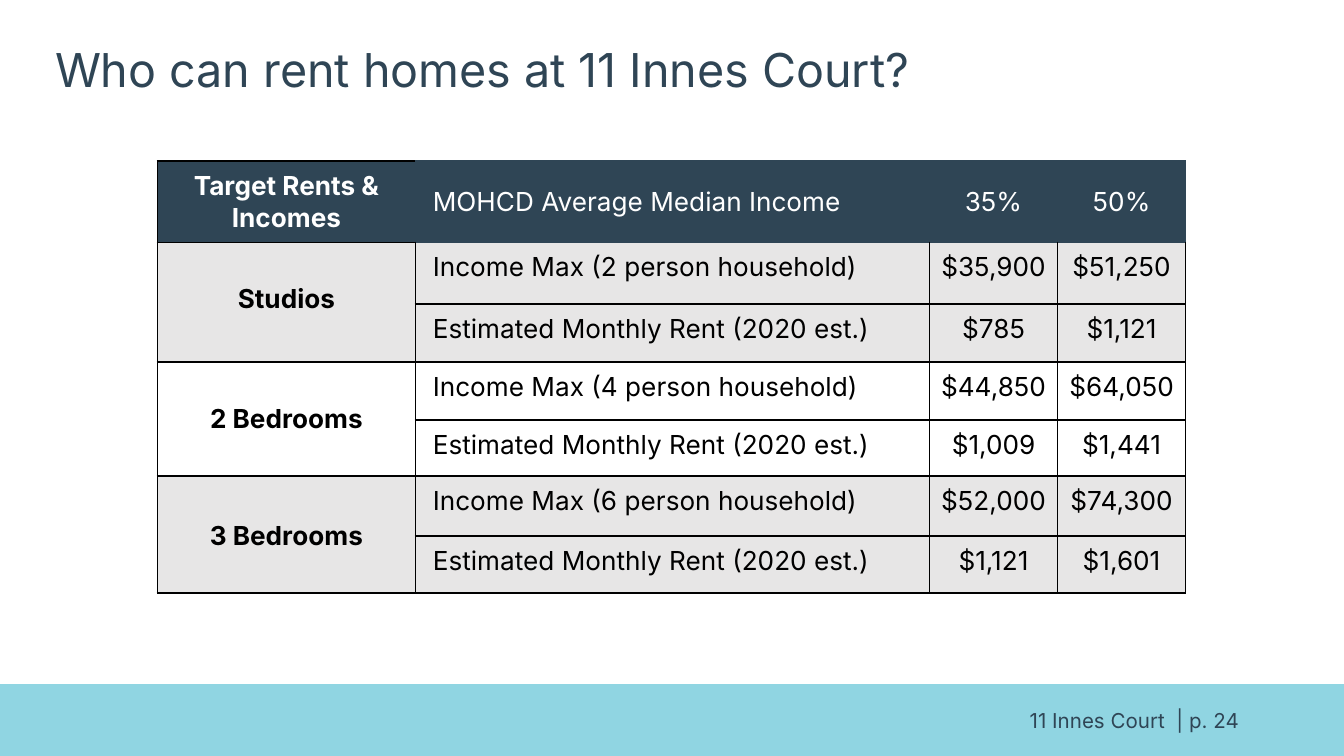
from dataclasses import dataclass
from typing import Any, NamedTuple

from lxml import etree
from pptx import Presentation
from pptx.dml.color import RGBColor
from pptx.enum.shapes import MSO_SHAPE
from pptx.enum.text import MSO_ANCHOR, PP_ALIGN
from pptx.oxml.ns import qn
from pptx.util import Pt

RECTANGLE = MSO_SHAPE.RECTANGLE
TOP, MIDDLE = MSO_ANCHOR.TOP, MSO_ANCHOR.MIDDLE
LEFT, CENTER, RIGHT = PP_ALIGN.LEFT, PP_ALIGN.CENTER, PP_ALIGN.RIGHT

COLORS = {
    "navy": "2F4555",
    "aqua": "90D5E2",
    "gray": "E7E6E6",
    "white": "FFFFFF",
    "black": "000000",
}
FONT = "Inter"
SLIDE_WIDTH, SLIDE_HEIGHT = 720, 405
TABLE_LEFT, TABLE_TOP = 84.4, 86.2
COLUMN_WIDTHS = (138.2, 275.4, 68.6, 68.6)
ROW_HEIGHTS = (43.4, 33.1, 31, 31, 30.2, 32.2, 30.5)
CELL_INSET = 5
LABEL_INDENT = 4.3
EDGES = ("lnL", "lnR", "lnT", "lnB")
HEADINGS = ("MOHCD Average Median Income", "35%", "50%")


class Box(NamedTuple):
    left: float
    top: float
    width: float
    height: float


@dataclass(frozen=True)
class TextStyle:
    size: float
    color: str
    bold: bool = False
    align: PP_ALIGN = LEFT
    line_spacing: float = 1.0


@dataclass(frozen=True)
class HomeType:
    name: str
    household: int
    incomes: tuple[str, str]
    rents: tuple[str, str]
    fill: str
    name_inset: float


@dataclass(frozen=True)
class CellFormat:
    style: TextStyle
    fill: str
    borders: tuple[str, str, str, str]
    anchor: MSO_ANCHOR = TOP
    top_inset: float = CELL_INSET
    indent: float = 0


HOME_TYPES = (
    HomeType("Studios", 2, ("$35,900", "$51,250"), ("$785", "$1,121"), "gray", 22),
    HomeType("2 Bedrooms", 4, ("$44,850", "$64,050"), ("$1,009", "$1,441"), "white", 22),
    HomeType("3 Bedrooms", 6, ("$52,000", "$74,300"), ("$1,121", "$1,601"), "gray", 23.5),
)


def rgb(name: str) -> RGBColor:
    """Return the named colour."""
    return RGBColor.from_string(COLORS[name])


def set_attributes(target: Any, values: dict[str, Any]) -> None:
    """Set every format value on the target."""
    for name, value in values.items():
        setattr(target, name, value)


def write_text(text_frame: Any, text: str, style: TextStyle, indent: float = 0) -> None:
    """Fill a text frame with one styled paragraph per line."""
    for index, line in enumerate(text.split("\n")):
        paragraph = text_frame.add_paragraph() if index else text_frame.paragraphs[0]
        if indent:
            paragraph._p.get_or_add_pPr().set("marL", str(Pt(indent)))
        set_attributes(paragraph, {"alignment": style.align, "line_spacing": style.line_spacing})
        run = paragraph.add_run()
        run.text = line
        set_attributes(run.font, {"name": FONT, "size": Pt(style.size), "bold": style.bold})
        run.font.color.rgb = rgb(style.color)


def add_text(slide: Any, box: Box, text: str, style: TextStyle, inset: tuple[float, float]) -> None:
    """Add a wrapped, vertically centred text box."""
    text_frame = slide.shapes.add_textbox(*map(Pt, box)).text_frame
    horizontal, vertical = map(Pt, inset)
    set_attributes(text_frame, {
        "word_wrap": True,
        "vertical_anchor": MIDDLE,
        "margin_left": horizontal,
        "margin_right": horizontal,
        "margin_top": vertical,
        "margin_bottom": vertical,
    })
    write_text(text_frame, text, style)


def add_band(slide: Any, box: Box, color: str) -> None:
    """Add a plain filled rectangle."""
    shape = slide.shapes.add_shape(RECTANGLE, *map(Pt, box))
    shape.shadow.inherit = False
    shape.fill.solid()
    shape.fill.fore_color.rgb = rgb(color)
    shape.line.fill.background()


def format_cell(cell: Any, layout: CellFormat) -> None:
    """Set the borders, fill, insets and anchor of a cell."""
    properties = cell._tc.get_or_add_tcPr()
    for edge, color in zip(EDGES, layout.borders):
        line = etree.SubElement(properties, qn(f"a:{edge}"), w=str(Pt(1)))
        fill = etree.SubElement(line, qn("a:solidFill"))
        etree.SubElement(fill, qn("a:srgbClr"), val=COLORS[color])
    cell.fill.solid()
    cell.fill.fore_color.rgb = rgb(layout.fill)
    set_attributes(cell, {
        "margin_left": Pt(CELL_INSET),
        "margin_right": Pt(CELL_INSET),
        "margin_top": Pt(layout.top_inset),
        "margin_bottom": Pt(CELL_INSET),
        "vertical_anchor": layout.anchor,
    })


def fill_cell(cell: Any, text: str, layout: CellFormat) -> None:
    """Format a cell and write its text."""
    format_cell(cell, layout)
    write_text(cell.text_frame, text, layout.style, layout.indent)


def fill_header(table: Any) -> None:
    """Fill the heading row."""
    title_style = TextStyle(14, "white", bold=True, align=CENTER)
    title_borders = ("black", "navy", "black", "black")
    fill_cell(table.cell(0, 0), "Target Rents &\nIncomes", CellFormat(title_style, "navy", title_borders))
    for column, heading in enumerate(HEADINGS, start=1):
        style = TextStyle(14, "white", align=LEFT if column == 1 else CENTER)
        indent = LABEL_INDENT if column == 1 else 0
        layout = CellFormat(style, "navy", ("navy",) * 4, MIDDLE, indent=indent)
        fill_cell(table.cell(0, column), heading, layout)


def fill_home_type(table: Any, row: int, home: HomeType) -> None:
    """Fill the income and rent rows of one home type."""
    plain = ("black",) * 4
    name_style = TextStyle(14, "black", bold=True, align=CENTER)
    name_layout = CellFormat(name_style, home.fill, plain, top_inset=home.name_inset)
    table.cell(row, 0).merge(table.cell(row + 1, 0))
    fill_cell(table.cell(row, 0), home.name, name_layout)
    format_cell(table.cell(row + 1, 0), name_layout)
    lines = (
        (f"Income Max ({home.household} person household)", *home.incomes),
        ("Estimated Monthly Rent (2020 est.)", *home.rents),
    )
    for line_row, values in enumerate(lines, start=row):
        borders = ("black", "black", "navy", "black") if line_row == 1 else plain
        for column, value in enumerate(values, start=1):
            style = TextStyle(14, "black", align=LEFT if column == 1 else CENTER)
            indent = LABEL_INDENT if column == 1 else 0
            fill_cell(table.cell(line_row, column), value, CellFormat(style, home.fill, borders, indent=indent))


def add_rent_table(slide: Any) -> None:
    """Add the table of rents and incomes."""
    box = Box(TABLE_LEFT, TABLE_TOP, sum(COLUMN_WIDTHS), sum(ROW_HEIGHTS))
    table = slide.shapes.add_table(len(ROW_HEIGHTS), len(COLUMN_WIDTHS), *map(Pt, box)).table
    set_attributes(table, {"first_row": False, "horz_banding": False})
    for column, width in zip(table.columns, COLUMN_WIDTHS):
        column.width = Pt(width)
    for row, height in zip(table.rows, ROW_HEIGHTS):
        row.height = Pt(height)
    fill_header(table)
    for index, home in enumerate(HOME_TYPES):
        fill_home_type(table, 1 + 2 * index, home)


def main() -> None:
    """Build and save the slide."""
    presentation = Presentation()
    set_attributes(presentation, {"slide_width": Pt(SLIDE_WIDTH), "slide_height": Pt(SLIDE_HEIGHT)})
    slide = presentation.slides.add_slide(presentation.slide_layouts[6])
    add_band(slide, Box(0, 366.5, SLIDE_WIDTH, 38.5), "aqua")
    footer_style = TextStyle(11, "navy", align=RIGHT)
    add_text(slide, Box(540.7, 375.1, 130.3, 21.6), "11 Innes Court  | p. 24", footer_style, (7.2, 3.6))
    add_rent_table(slide)
    title_style = TextStyle(25, "navy", line_spacing=0.9)
    add_text(slide, Box(28, 9.4, 638.6, 59), "Who can rent homes at 11 Innes Court?", title_style, (1.5, 1.5))
    presentation.save("out.pptx")


if __name__ == "__main__":
    main()
